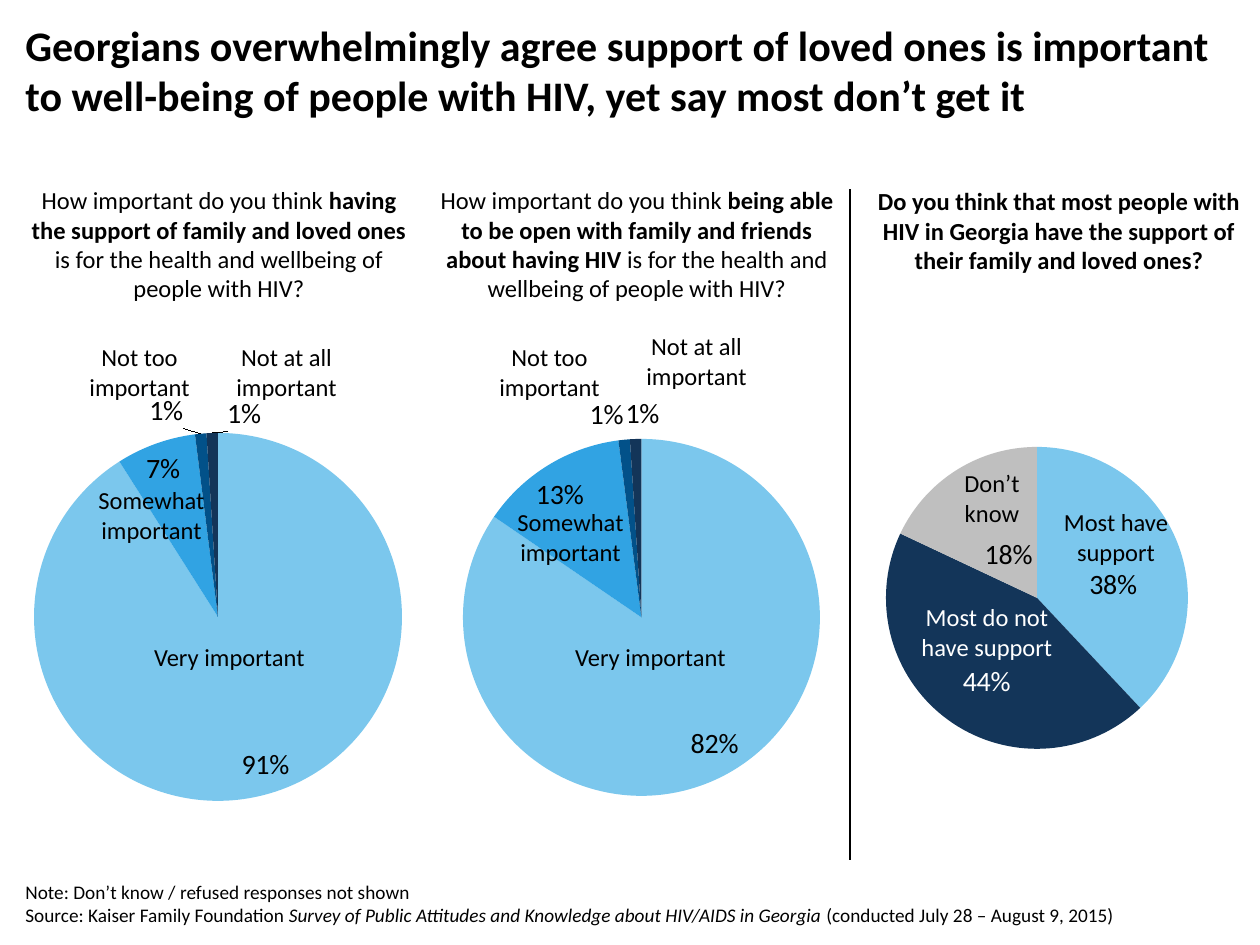
from dataclasses import dataclass

import pptx
import pptx.chart.data
import pptx.dml.color
import pptx.enum.chart
import pptx.enum.shapes
import pptx.enum.text
import pptx.oxml
import pptx.oxml.ns
import pptx.util

PX_PER_INCH = 126
FONT = "Calibri"
BLACK, WHITE = "000000", "FFFFFF"
SKY, BLUE, DEEP, NAVY, GREY = "7BC7ED", "31A3E3", "025189", "133559", "BFBFBF"
CHART_TOP, CHART_WIDTH, CHART_HEIGHT = 280, 403, 634

Position = pptx.enum.chart.XL_LABEL_POSITION
Align = pptx.enum.text.PP_ALIGN
Anchor = pptx.enum.text.MSO_ANCHOR


@dataclass
class Span:
    text: str
    bold: bool = False
    italic: bool = False


@dataclass
class TextBox:
    left: int
    top: int
    width: int
    height: int
    paras: list[list[Span]]
    size: int = 14
    color: str = BLACK
    align: Align = Align.CENTER
    anchor: Anchor = Anchor.TOP
    grow: bool = True


@dataclass
class Slice:
    value: float
    color: str
    position: Position
    shift: tuple[int, int] = (0, 0)
    label_color: str = BLACK


@dataclass
class Pie:
    left: int
    plot_left: int
    plot_top: int
    diameter: int
    slices: list[Slice]
    leader_lines: bool = False


def px(length: int) -> pptx.util.Emu:
    return pptx.util.Emu(round(length * 914400 / PX_PER_INCH))


def rgb(color: str) -> pptx.dml.color.RGBColor:
    return pptx.dml.color.RGBColor.from_string(color)


def label(left: int, top: int, width: int, text: str, color: str = BLACK) -> TextBox:
    height = 43 if text == "Very important" else 72
    return TextBox(left, top, width, height, [[Span(text)]], color=color)


def add_text(page, item: TextBox) -> None:
    box = page.shapes.add_textbox(px(item.left), px(item.top), px(item.width), px(item.height))
    frame = box.text_frame
    frame.word_wrap = True
    frame.vertical_anchor = item.anchor
    if item.grow:
        frame.auto_size = pptx.enum.text.MSO_AUTO_SIZE.SHAPE_TO_FIT_TEXT
    for index, spans in enumerate(item.paras):
        para = frame.add_paragraph() if index else frame.paragraphs[0]
        para.alignment = item.align
        para.font.name = FONT
        para.font.size = pptx.util.Pt(item.size)
        para.font.color.rgb = rgb(item.color)
        for span in spans:
            run = para.add_run()
            run.text = span.text
            if span.bold:
                run.font.bold = True
            if span.italic:
                run.font.italic = True


def layout_xml(x: float, y: float, before: str = "", after: str = ""):
    """Manual layout element, in fractions of the chart's size."""
    return pptx.oxml.parse_xml(
        f'<c:layout {pptx.oxml.ns.nsdecls("c")}><c:manualLayout>{before}'
        f'<c:x val="{x:.4f}"/><c:y val="{y:.4f}"/>{after}'
        "</c:manualLayout></c:layout>")


def place_plot(chart, pie: Pie) -> None:
    layout = layout_xml(
        (pie.plot_left - pie.left) / CHART_WIDTH,
        (pie.plot_top - CHART_TOP) / CHART_HEIGHT,
        '<c:layoutTarget val="inner"/><c:xMode val="edge"/><c:yMode val="edge"/>',
        f'<c:w val="{pie.diameter / CHART_WIDTH:.4f}"/>'
        f'<c:h val="{pie.diameter / CHART_HEIGHT:.4f}"/>')
    area = chart.element.find(".//" + pptx.oxml.ns.qn("c:plotArea"))
    for old in area.findall(pptx.oxml.ns.qn("c:layout")):
        area.remove(old)
    area.insert(0, layout)


def style_label(font, color: str) -> None:
    font.name = FONT
    font.size = pptx.util.Pt(16)
    font.color.rgb = rgb(color)


def add_pie(page, pie: Pie) -> None:
    data = pptx.chart.data.CategoryChartData(number_format="0%")
    data.categories = [str(number + 1) for number in range(len(pie.slices))]
    data.add_series("Series 1", [part.value for part in pie.slices])
    chart = page.shapes.add_chart(
        pptx.enum.chart.XL_CHART_TYPE.PIE, px(pie.left), px(CHART_TOP),
        px(CHART_WIDTH), px(CHART_HEIGHT), data).chart
    chart.has_legend = False
    chart.has_title = False
    chart.font.name = FONT
    chart.font.size = pptx.util.Pt(18)
    chart.font.color.rgb = rgb(BLACK)
    place_plot(chart, pie)

    series = chart.plots[0].series[0]
    labels = series.data_labels
    labels.show_value = True
    labels.number_format = "0%"
    labels.number_format_is_linked = False
    style_label(labels.font, BLACK)
    for leader in labels._element.xpath("c:showLeaderLines"):
        leader.set("val", str(int(pie.leader_lines)))
    for index, part in enumerate(pie.slices):
        point = series.points[index]
        point.format.fill.solid()
        point.format.fill.fore_color.rgb = rgb(part.color)
        point.data_label.position = part.position
        style_label(point.data_label.font, part.label_color)
        if any(part.shift):
            mark = labels._element.xpath(f"c:dLbl/c:idx[@val='{index}']")[0]
            mark.addnext(layout_xml(part.shift[0] / CHART_WIDTH, part.shift[1] / CHART_HEIGHT))


def add_divider(page, x: int, top: int, bottom: int) -> None:
    line = page.shapes.add_connector(
        pptx.enum.shapes.MSO_CONNECTOR.STRAIGHT, px(x), px(top), px(x), px(bottom))
    line.line.color.rgb = rgb(BLACK)
    line.line.width = pptx.util.Pt(1)
    line._element.spPr.append(
        pptx.oxml.parse_xml(f'<a:effectLst {pptx.oxml.ns.nsdecls("a")}/>'))


INSIDE, OUTSIDE, CENTER = Position.INSIDE_END, Position.OUTSIDE_END, Position.CENTER
PIES = [
    Pie(850, 886, 447, 302, [Slice(0.38, SKY, CENTER, (6, 15)),
                             Slice(0.44, NAVY, CENTER, (-6, 23), WHITE),
                             Slice(0.18, GREY, CENTER, (12, 21))]),
    Pie(16, 34, 433, 368, [Slice(0.91, SKY, INSIDE, (22, -4)),
                           Slice(0.07, BLUE, INSIDE, (-12, 1)),
                           Slice(0.01, DEEP, OUTSIDE, (-17, 2)),
                           Slice(0.01, NAVY, OUTSIDE, (32, 6))], leader_lines=True),
    Pie(433, 463, 439, 357, [Slice(0.82, SKY, INSIDE, (17, -7)),
                             Slice(0.13, BLUE, INSIDE, (-16, 7)),
                             Slice(0.01, DEEP, OUTSIDE),
                             Slice(0.01, NAVY, OUTSIDE, (7, 0))]),
]
ASK = Span("How important do you think ")
PURPOSE = Span("is for the health and wellbeing of people with HIV?")
TEXTS = [
    TextBox(13, 13, 1235, 126, [[Span(
        "Georgians overwhelmingly agree support of loved ones is important to well-being "
        "of people with HIV, yet say most don’t get it", bold=True)]],
        size=24, align=Align.LEFT, grow=False),
    TextBox(13, 857, 1147, 76, [
        [Span("Note: Don’t know / refused responses not shown")],
        [Span("Source: Kaiser Family Foundation "),
         Span("Survey of Public Attitudes and Knowledge about HIV/AIDS in Georgia ", italic=True),
         Span("(conducted July 28 – August 9, 2015)")]],
        size=11, align=Align.LEFT, anchor=Anchor.BOTTOM, grow=False),
    TextBox(10, 179, 418, 131, [[
        ASK, Span("having the support of family and loved ones ", bold=True), PURPOSE]]),
    TextBox(428, 179, 418, 131, [[
        ASK, Span("being able to be open with family and friends about having HIV ", bold=True),
        PURPOSE]]),
    TextBox(850, 180, 418, 102, [[Span(
        "Do you think that most people with HIV in Georgia have the support of their "
        "family and loved ones?", bold=True)]]),
    label(1037, 501, 158, "Most have support"),
    label(908, 596, 158, "Most do not have support", WHITE),
    label(924, 462, 136, "Don’t know"),
    *(label(left, 636, 189, "Very important") for left in (135, 556)),
    *(label(left, top, 159, "Somewhat important") for left, top in ((72, 479), (491, 501))),
    *(label(left, 336, 159, "Not too important") for left in (60, 470)),
    *(label(left, top, 159, "Not at all important") for left, top in ((207, 336), (617, 325))),
]


def main() -> None:
    deck = pptx.Presentation()
    deck.slide_width, deck.slide_height = px(1260), px(945)
    page = deck.slides.add_slide(deck.slide_layouts[6])
    for pie in PIES:
        add_pie(page, pie)
    add_divider(page, 850, 189, 860)
    for item in TEXTS:
        add_text(page, item)
    deck.save("out.pptx")


if __name__ == "__main__":
    main()
